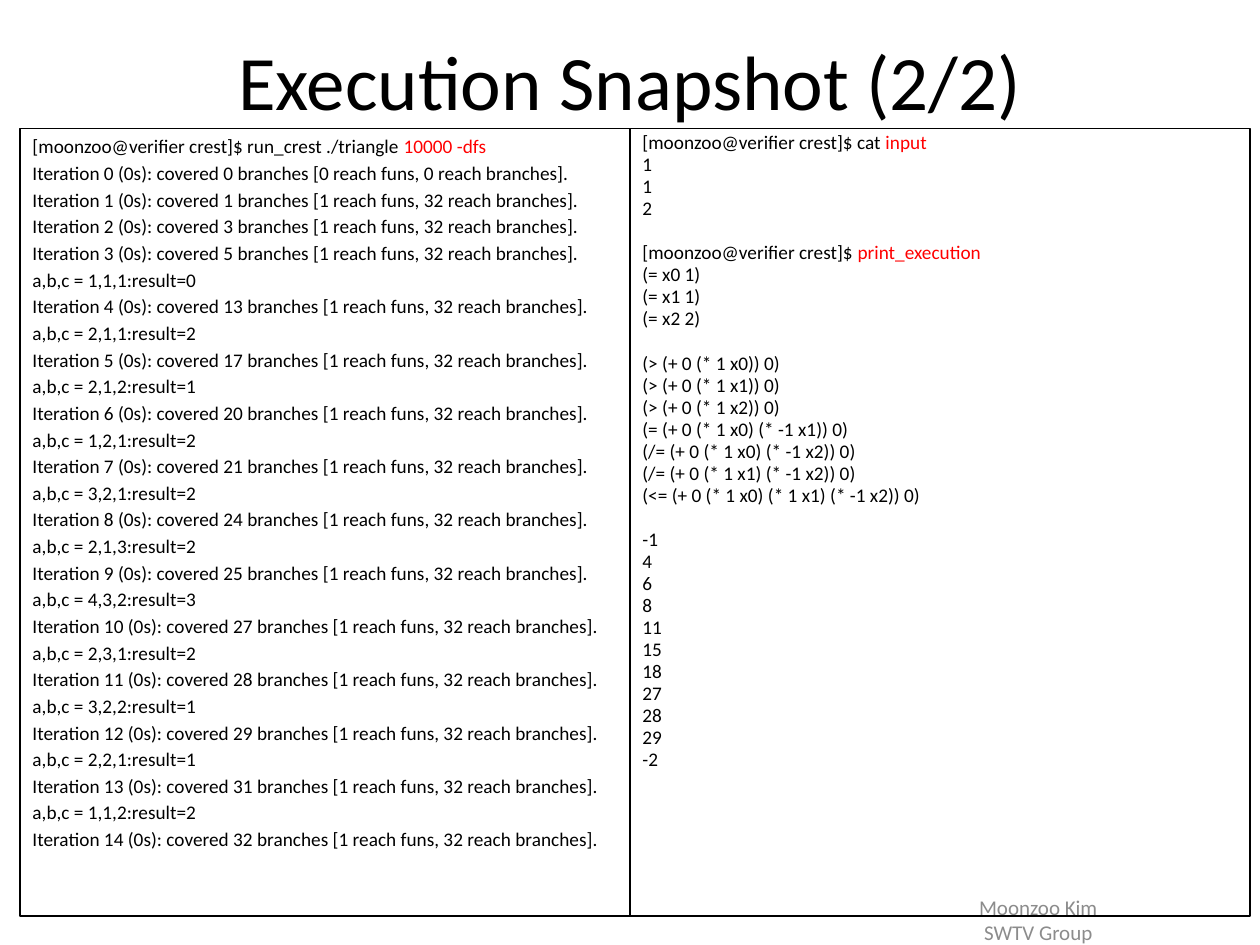
from pptx import Presentation
from pptx.dml.color import RGBColor
from pptx.enum.shapes import MSO_SHAPE
from pptx.enum.text import MSO_ANCHOR, PP_ALIGN
from pptx.util import Inches, Pt

BLACK, RED, GRAY = "000000", "FF0000", "8C8C8C"
PROMPT = "[moonzoo@verifier crest]$ "
COVERED = [0, 1, 3, 5, 13, 17, 20, 21, 24, 25, 27, 28, 29, 31, 32]
FIRST = 3  # first iteration that prints a result
RESULTS = ["1,1,1:result=0", "2,1,1:result=2", "2,1,2:result=1",
           "1,2,1:result=2", "3,2,1:result=2", "2,1,3:result=2",
           "4,3,2:result=3", "2,3,1:result=2", "3,2,2:result=1",
           "2,2,1:result=1", "1,1,2:result=2"]
INPUT = [(PROMPT + "cat ", "input"), "1", "1", "2"]
VALUES = [(PROMPT, "print_execution"), "(= x0 1)", "(= x1 1)", "(= x2 2)"]
PATH = ["(> (+ 0 (* 1 x0)) 0)",
        "(> (+ 0 (* 1 x1)) 0)",
        "(> (+ 0 (* 1 x2)) 0)",
        "(= (+ 0 (* 1 x0) (* -1 x1)) 0)",
        "(/= (+ 0 (* 1 x0) (* -1 x2)) 0)",
        "(/= (+ 0 (* 1 x1) (* -1 x2)) 0)",
        "(<= (+ 0 (* 1 x0) (* 1 x1) (* -1 x2)) 0)"]
BRANCHES = "-1 4 6 8 11 15 18 27 28 29 -2".split()


def color(code):
    return RGBColor.from_string(code)


def trace():
    """List the lines that the test run prints."""
    lines = [(PROMPT + "run_crest ./triangle ", "10000 -dfs")]
    for step, count in enumerate(COVERED):
        reach = "1 reach funs, 32" if step else "0 reach funs, 0"
        lines.append(f"Iteration {step} (0s): covered {count} branches "
                     f"[{reach} reach branches].")
        if 0 <= step - FIRST < len(RESULTS):
            lines.append("a,b,c = " + RESULTS[step - FIRST])
    return lines


class Deck:
    font = "Calibri"
    body = 11
    space = 2

    def __init__(self):
        self.prs = Presentation()
        self.prs.slide_width, self.prs.slide_height = Inches(10), Inches(7.5)
        self.slide = self.prs.slides.add_slide(self.prs.slide_layouts[5])

    def style(self, run, size, code=BLACK):
        run.font.name, run.font.size = self.font, Pt(size)
        run.font.color.rgb = color(code)

    def label(self, shape, text, size, code=BLACK):
        """Fill a shape with one centred paragraph."""
        frame = shape.text_frame
        frame.text = text
        frame.word_wrap = True
        frame.vertical_anchor = MSO_ANCHOR.MIDDLE
        para = frame.paragraphs[0]
        para.alignment = PP_ALIGN.CENTER
        self.style(para.runs[0], size, code)

    def title(self, text, *box):
        shape = self.slide.shapes.title
        shape.left, shape.top, shape.width, shape.height = map(Inches, box)
        self.label(shape, text, 44)

    def footer(self, text, *box):
        shape = self.slide.shapes.add_textbox(*map(Inches, box))
        self.label(shape, text, 12, GRAY)

    def panel(self, groups, pitch, gap, *box):
        """Draw a framed listing; gap is the extra space between groups."""
        shape = self.slide.shapes.add_shape(MSO_SHAPE.RECTANGLE,
                                            *map(Inches, box))
        shape.shadow.inherit = False
        shape.fill.background()
        shape.line.color.rgb = color(BLACK)
        shape.line.width = Pt(0.75)
        frame = shape.text_frame
        frame.word_wrap = True
        frame.vertical_anchor = MSO_ANCHOR.TOP
        para = frame.paragraphs[0]
        for part, group in enumerate(groups):
            for row, line in enumerate(group):
                if part or row:
                    para = frame.add_paragraph()
                para.alignment = PP_ALIGN.LEFT
                para.line_spacing = pitch
                extra = gap if part and not row else 0
                para.space_before = Pt(self.space + extra)
                pieces = (line,) if isinstance(line, str) else line
                for text, code in zip(pieces, (BLACK, RED)):
                    run = para.add_run()
                    run.text = text
                    self.style(run, self.body, code)


def main():
    deck = Deck()
    deck.title("Execution Snapshot (2/2)", 0, 0.16, 10, 0.94)
    deck.footer("Moonzoo Kim SWTV Group", 7.5, 7.1, 1.48, 0.4)
    deck.panel([trace()], 1.0, 0, 0.16, 1.02, 4.84, 6.25)
    deck.panel([INPUT, VALUES, PATH, BRANCHES], 0.8, 12.75,
               5, 1.02, 4.92, 6.25)
    deck.prs.save("out.pptx")


if __name__ == "__main__":
    main()
